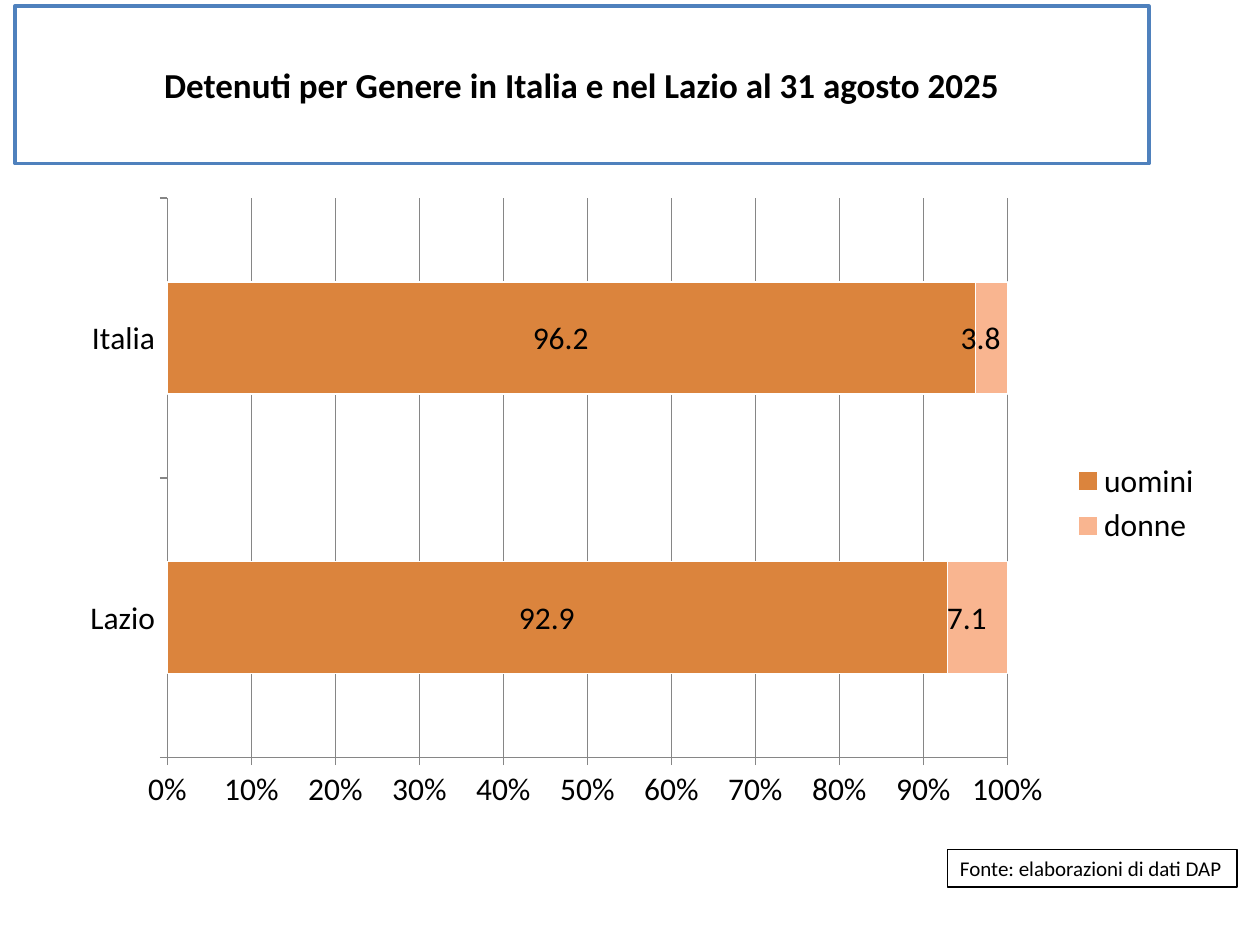
"""Build a slide comparing prisoners by gender in Italy and in Lazio."""
import pptx
import pptx.chart.data
import pptx.dml.color
import pptx.enum.chart
import pptx.enum.shapes
import pptx.enum.text
import pptx.oxml
import pptx.oxml.ns
import pptx.util

Pt = pptx.util.Pt
FONT = "Calibri"
TITLE = "Detenuti per Genere in Italia e nel Lazio al 31 agosto 2025"
SOURCE = "Fonte: elaborazioni di dati DAP"
REGIONS = ["Lazio", "Italia"]
GENDERS = [("uomini", [92.9, 96.2], "DB843D"), ("donne", [7.1, 3.8], "F9B590")]
LABEL_FORMAT = r"_-* #,##0.0\ _€_-;\-* #,##0.0\ _€_-"
PLOT_AREA = {"x": 0.09, "y": 0.02, "w": 0.73, "h": 0.88}


def rgb(color):
    return pptx.dml.color.RGBColor.from_string(color)


def style_font(font, size, bold=False):
    font.name, font.size, font.bold = FONT, Pt(size), bold
    font.color.rgb = rgb("000000")


def style_line(line, color, width):
    line.color.rgb = rgb(color)
    line.width = Pt(width)


def add_box(slide, place, text, size, bold, align, border, wrap):
    box = slide.shapes.add_shape(
        pptx.enum.shapes.MSO_SHAPE.RECTANGLE, *[Pt(n) for n in place])
    box.shadow.inherit = False
    box.fill.solid()
    box.fill.fore_color.rgb = rgb("FFFFFF")
    style_line(box.line, *border)
    frame = box.text_frame
    frame.word_wrap = wrap
    frame.vertical_anchor = pptx.enum.text.MSO_ANCHOR.MIDDLE
    paragraph = frame.paragraphs[0]
    paragraph.alignment = align
    run = paragraph.add_run()
    run.text = text
    style_font(run.font, size, bold)


def place_plot(chart):
    parts = "".join(f'<c:{k}Mode val="edge"/>' for k in "xy")
    parts += "".join(f'<c:{k} val="{v}"/>' for k, v in PLOT_AREA.items())
    layout = pptx.oxml.parse_xml(
        f'<c:layout {pptx.oxml.ns.nsdecls("c")}><c:manualLayout>'
        f'<c:layoutTarget val="inner"/>{parts}</c:manualLayout></c:layout>')
    plot_area = chart.plots[0]._element.getparent()
    for old in plot_area.findall(pptx.oxml.ns.qn("c:layout")):
        plot_area.remove(old)
    plot_area.insert(0, layout)


def add_gender_chart(slide, place):
    kinds = pptx.enum.chart
    shares = pptx.chart.data.CategoryChartData()
    shares.categories = REGIONS
    for gender, values, _ in GENDERS:
        shares.add_series(gender, values)
    chart = slide.shapes.add_chart(
        kinds.XL_CHART_TYPE.BAR_STACKED_100, *[Pt(n) for n in place], shares).chart
    chart.has_title = False
    style_font(chart.font, 18)
    chart.has_legend = True
    chart.legend.position = kinds.XL_LEGEND_POSITION.RIGHT
    chart.legend.include_in_layout = False

    bars = chart.plots[0]
    bars.gap_width, bars.overlap, bars.vary_by_categories = 150, 100, False
    for series, (_, _, color) in zip(bars.series, GENDERS):
        series.format.fill.solid()
        series.format.fill.fore_color.rgb = rgb(color)
        style_line(series.format.line, "FFFFFF", 0.75)
        labels = series.data_labels
        labels.show_value = True
        labels.position = kinds.XL_LABEL_POSITION.CENTER
        labels.number_format, labels.number_format_is_linked = LABEL_FORMAT, False
        style_font(labels.font, 18)

    percent = chart.value_axis
    percent.minimum_scale, percent.maximum_scale, percent.major_unit = 0, 1, 0.1
    percent.has_major_gridlines = True
    style_line(percent.major_gridlines.format.line, "868686", 0.75)
    percent.tick_labels.number_format = "0%"
    percent.tick_labels.number_format_is_linked = False
    for axis in (chart.category_axis, percent):
        axis.major_tick_mark = kinds.XL_TICK_MARK.OUTSIDE
        style_line(axis.format.line, "868686", 0.75)
        style_font(axis.tick_labels.font, 18)
    place_plot(chart)


def main():
    deck = pptx.Presentation()
    deck.slide_width, deck.slide_height = Pt(720), Pt(540)
    slide = deck.slides.add_slide(deck.slide_layouts[6])
    align = pptx.enum.text.PP_ALIGN
    add_box(slide, (8.5, 3.5, 648, 90), TITLE, 20, True, align.CENTER, ("4F81BD", 2), True)
    add_box(slide, (541.5, 485.5, 165.5, 21.5), SOURCE, 12, False, align.LEFT,
            ("000000", 0.75), False)
    add_gender_chart(slide, (36.5, 106, 657.5, 363.5))
    deck.save("out.pptx")


if __name__ == "__main__":
    main()
